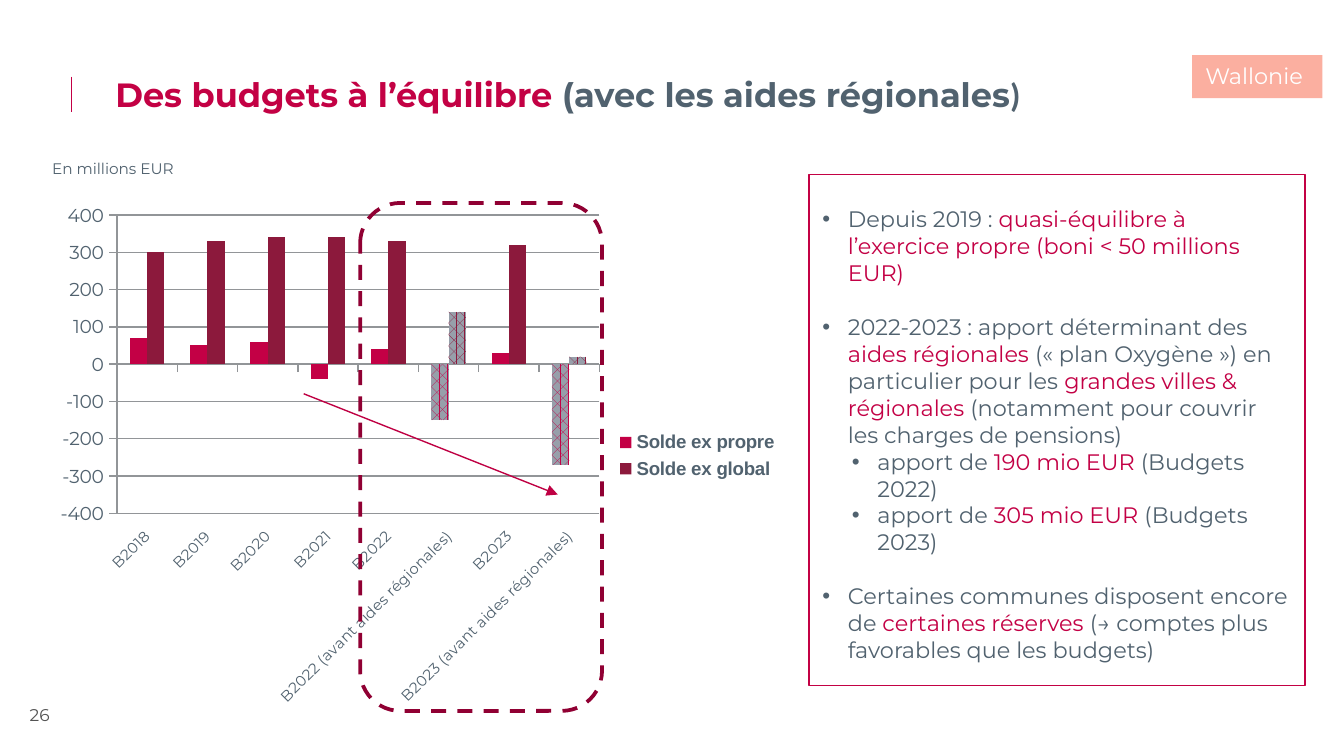
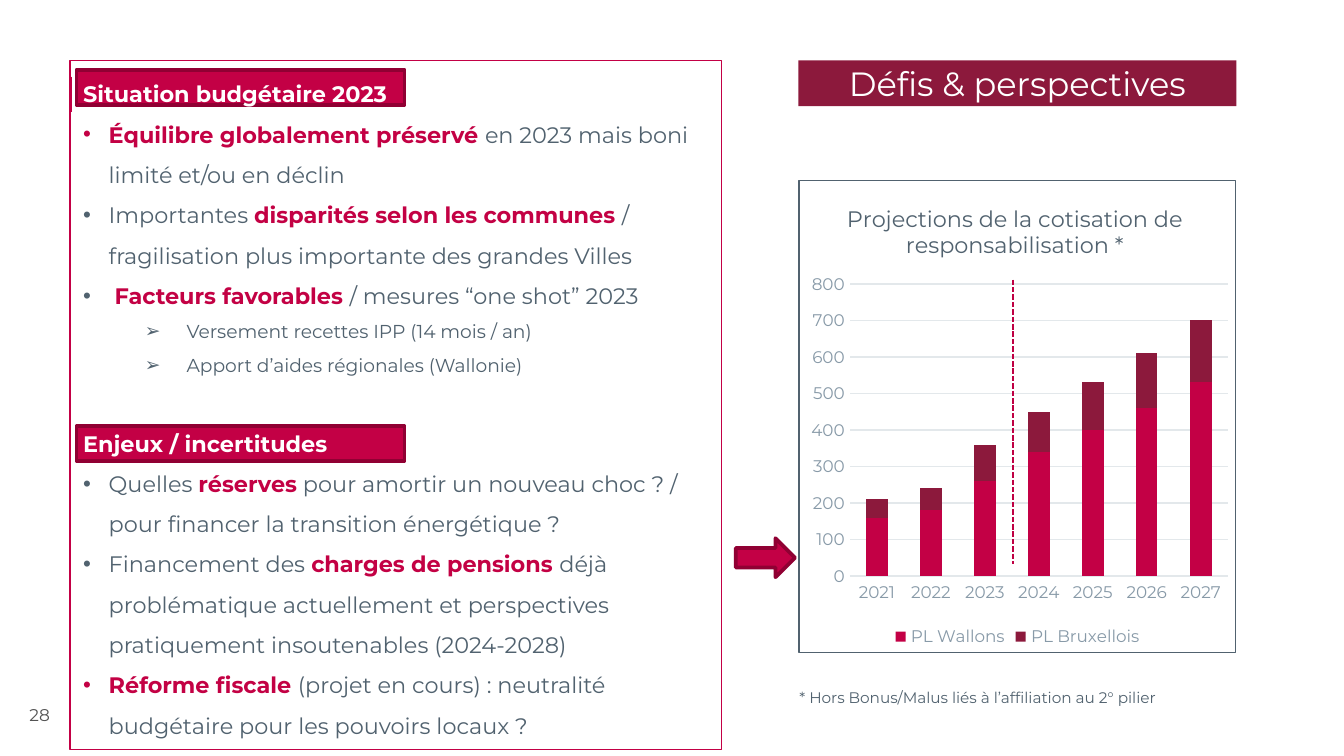
from lxml import etree
from pptx import Presentation
from pptx.chart.data import CategoryChartData
from pptx.dml.color import RGBColor
from pptx.enum.chart import XL_CHART_TYPE, XL_LEGEND_POSITION, XL_TICK_LABEL_POSITION, XL_TICK_MARK
from pptx.enum.dml import MSO_LINE, MSO_PATTERN
from pptx.enum.shapes import MSO_CONNECTOR, MSO_SHAPE
from pptx.enum.text import MSO_ANCHOR, PP_ALIGN
from pptx.oxml import parse_xml
from pptx.oxml.ns import nsdecls, qn
from pptx.util import Emu, Pt

PX = 9144
RED = RGBColor(0xC3, 0x00, 0x45)
ROSE = RGBColor(0xC3, 0x01, 0x44)
WINE = RGBColor(0x8C, 0x19, 0x3C)
DEEP = RGBColor(0x90, 0x00, 0x33)
ARROW = RGBColor(0xBF, 0x00, 0x43)
SLATE = RGBColor(0x51, 0x62, 0x6F)
STEEL = RGBColor(0x88, 0x9A, 0xA8)
MIST = RGBColor(0xE3, 0xE8, 0xEB)
ASH = RGBColor(0x97, 0x9F, 0xAA)
RULE = RGBColor(0x92, 0x95, 0x98)
PEACH = RGBColor(0xFB, 0xAF, 0xA0)
INK = RGBColor(0x53, 0x53, 0x53)
WHITE = RGBColor(0xFF, 0xFF, 0xFF)
FACE = "Montserrat"

RECT, ROUND, DOWN = MSO_SHAPE.RECTANGLE, MSO_SHAPE.ROUNDED_RECTANGLE, MSO_SHAPE.DOWN_ARROW
LEFT, MID = PP_ALIGN.LEFT, PP_ALIGN.CENTER
TOP, MIDDLE = MSO_ANCHOR.TOP, MSO_ANCHOR.MIDDLE
DASH, DOTS = MSO_LINE.DASH, MSO_LINE.SQUARE_DOT
OUT, NONE = XL_TICK_MARK.OUTSIDE, XL_TICK_MARK.NONE
LOW = XL_TICK_LABEL_POSITION.LOW

KINDS = {
    "text": dict(left=0, hang=0, mark=None),
    "head": dict(left=0, hang=0, mark=None, bold=True, color=WHITE),
    "item": dict(left=19, hang=19, mark="•"),
    "sub": dict(left=41, hang=19, mark="•"),
    "step": dict(left=77, hang=31, mark="➢", size=10),
}

NOTES = [
    ("item", "Depuis 2019 : |quasi-équilibre à l’exercice propre (boni < 50 millions EUR)", 0),
    ("item", "2022-2023 : apport déterminant des |aides régionales |(«\u00a0plan Oxygène\u00a0») en particulier "
     "pour les |grandes villes & régionales |(notamment pour couvrir les charges de pensions)", 14.6),
    ("sub", "apport de |190 mio EUR |(Budgets 2022)", 0),
    ("sub", "apport de| 305 mio EUR |(Budgets 2023)", 0),
    ("item", "Certaines communes disposent encore de |certaines réserves |"
     "(→ comptes plus favorables que les budgets)", 14.6),
]
POINTS = [
    ("head", "Situation budgétaire 2023", 0),
    ("item", "|Équilibre globalement préservé |en 2023 mais boni limité et/ou en déclin", 0),
    ("item", "Importantes |disparités selon les communes |/ fragilisation plus importante des grandes Villes", 0),
    ("item", " |Facteurs favorables |/ mesures “one shot” 2023", 0),
    ("step", "Versement recettes IPP (14 mois / an)", 0),
    ("step", "Apport d’aides régionales (Wallonie)", 0),
    ("head", "Enjeux / incertitudes", 21.4),
    ("item", "Quelles |réserves| pour amortir un nouveau choc ? / pour financer la transition énergétique ?", 0),
    ("item", "Financement des |charges de pensions |déjà problématique actuellement et perspectives "
     "pratiquement insoutenables (2024-2028)", 0),
    ("item", "|Réforme fiscale |(projet en cours) : neutralité budgétaire pour les pouvoirs locaux ?", 0),
]
BUDGET = dict(
    kind=XL_CHART_TYPE.COLUMN_CLUSTERED, box=(34, 144, 555, 390), plot=(87, 160, 359, 222),
    cats=["B2018", "B2019", "B2020", "B2021", "B2022", "B2022 (avant aides régionales)",
          "B2023", "B2023 (avant aides régionales)"],
    rows=[("Solde ex propre", [70, 50, 60, -40, 40, -150, 30, -270], RED),
          ("Solde ex global", [300, 330, 340, 340, 330, 140, 320, 20], WINE)],
    span=(-400, 400), tick=OUT, grid=RULE, axis=RULE,
    cat=dict(size=8, color=SLATE, name=FACE), val=dict(size=10, color=SLATE, name=FACE),
    key=dict(size=10, color=SLATE, name="Arial", bold=True), side=XL_LEGEND_POSITION.RIGHT,
    hatch=(5, 7), turn=-45)
PENSION = dict(
    kind=XL_CHART_TYPE.COLUMN_STACKED, box=(594, 134, 326, 352), plot=(632, 211, 282, 218),
    cats=["2021", "2022", "2023", "2024", "2025", "2026", "2027"],
    rows=[("PL Wallons", [160, 180, 260, 340, 400, 460, 530], RED),
          ("PL Bruxellois", [50, 60, 100, 110, 130, 150, 170], WINE)],
    span=(0, 800), tick=NONE, grid=MIST, axis=None,
    cat=dict(size=9, color=STEEL, name=FACE), val=dict(size=9, color=STEEL, name=FACE),
    key=dict(size=9, color=STEEL, name=FACE), side=XL_LEGEND_POSITION.BOTTOM,
    title="Projections de la cotisation de responsabilisation *", edge=SLATE)


def px(*nums):
    return [Emu(n * PX) for n in nums]


def style(font, **fmt):
    for key, val in fmt.items():
        if key == "color":
            font.color.rgb = val
        else:
            setattr(font, key, Pt(val) if key == "size" else val)


def stroke(line, color, width=0.75, dash=None):
    if color is None:
        line.fill.background()
        return
    line.color.rgb = color
    line.width = Pt(width)
    if dash:
        line.dash_style = dash


def form(slide, kind, box, fill=None, line=None, width=0.75, dash=None):
    shape = slide.shapes.add_shape(kind, *px(*box))
    shape.shadow.inherit = False
    if fill is None:
        shape.fill.background()
    else:
        shape.fill.solid()
        shape.fill.fore_color.rgb = fill
    stroke(shape.line, line, width, dash)
    return shape


def label(slide, box):
    return slide.shapes.add_textbox(*px(*box))


def write(shape, paras, size=12, color=SLATE, accent=RED, bold=False,
          align=LEFT, anchor=TOP, space=1, pad=(10, 5, 10, 5)):
    frame = shape.text_frame
    frame.word_wrap = True
    frame.vertical_anchor = anchor
    for side, gap in zip(("left", "top", "right", "bottom"), px(*pad)):
        setattr(frame, "margin_" + side, gap)
    for n, (kind, text, before) in enumerate(paras):
        para = frame.add_paragraph() if n else frame.paragraphs[0]
        fmt = dict(size=size, color=color, name=FACE, bold=False) | KINDS[kind]
        left, hang, mark = (fmt.pop(key) for key in ("left", "hang", "mark"))
        if mark:
            props = para._p.get_or_add_pPr()
            props.set("marL", str(left * PX))
            props.set("indent", str(-hang * PX))
            etree.SubElement(props, qn("a:buFont")).set("typeface", "Arial")
            etree.SubElement(props, qn("a:buChar")).set("char", mark)
        para.alignment = align
        para.line_spacing = space
        para.space_before = Pt(before)
        for k, part in enumerate(text.split("|")):
            if part:
                run = para.add_run()
                run.text = part
                style(run.font, **(fmt | dict(color=accent, bold=bold) if k % 2 else fmt))


def link(slide, start, end, color, width=0.75, dash=None, head=False):
    line = slide.shapes.add_connector(MSO_CONNECTOR.STRAIGHT, *px(*start, *end))
    stroke(line.line, color, width, dash)
    props = line._element.spPr
    if head:
        etree.SubElement(props.find(qn("a:ln")), qn("a:tailEnd")).set("type", "triangle")
    etree.SubElement(props, qn("a:effectLst"))


def place(node, index, **spots):
    lay = node.find(qn("c:layout"))
    if lay is None:
        lay = etree.Element(qn("c:layout"))
        node.insert(index, lay)
    hand = etree.SubElement(lay, qn("c:manualLayout"))
    for key, val in spots.items():
        etree.SubElement(hand, qn("c:" + key)).set("val", str(val))


def graph(slide, info):
    data = CategoryChartData()
    data.categories = info["cats"]
    for name, vals, _ in info["rows"]:
        data.add_series(name, vals)
    box = info["box"]
    chart = slide.shapes.add_chart(info["kind"], *px(*box), data).chart
    style(chart.font, size=10, color=SLATE, name=FACE)
    chart.has_title = "title" in info
    if chart.has_title:
        frame = chart.chart_title.text_frame
        frame.text = info["title"]
        style(frame.paragraphs[0].runs[0].font, size=12, color=SLATE, name=FACE, bold=False)
        place(chart.chart_title._element, 1, xMode="edge", yMode="edge", x=0.1, y=0.04)
    chart.has_legend = True
    chart.legend.position = info["side"]
    chart.legend.include_in_layout = False
    style(chart.legend.font, **info["key"])

    cat, val = chart.category_axis, chart.value_axis
    val.minimum_scale, val.maximum_scale = info["span"]
    val.major_unit = 100
    val.tick_labels.number_format = "#,##0"
    val.tick_labels.number_format_is_linked = False
    val.has_major_gridlines = True
    stroke(val.major_gridlines.format.line, info["grid"])
    for axis, fmt, color in ((cat, info["cat"], info["grid"]), (val, info["val"], info["axis"])):
        axis.major_tick_mark = info["tick"]
        axis.minor_tick_mark = NONE
        style(axis.tick_labels.font, **fmt)
        stroke(axis.format.line, color)
    if "turn" in info:
        cat.tick_label_position = LOW
        body = cat._element.find(qn("c:txPr")).find(qn("a:bodyPr"))
        body.set("rot", str(info["turn"] * 60000))
        body.set("vert", "horz")

    plot = chart.plots[0]
    plot.gap_width = 150
    plot.vary_by_categories = False
    for row, (_, _, color) in zip(plot.series, info["rows"]):
        row.invert_if_negative = False
        row.format.fill.solid()
        row.format.fill.fore_color.rgb = color
        for n in info.get("hatch", ()):
            fill = row.points[n].format.fill
            fill.patterned()
            fill.pattern = MSO_PATTERN.PERCENT_60
            fill.fore_color.rgb = color
            fill.back_color.rgb = ASH

    x, y, w, h = info["plot"]
    root = chart.element.find(qn("c:chart"))
    place(root.find(qn("c:plotArea")), 0, layoutTarget="inner", xMode="edge", yMode="edge",
          x=(x - box[0]) / box[2], y=(y - box[1]) / box[3], w=w / box[2], h=h / box[3])
    if "edge" in info:
        root.addnext(parse_xml(
            f'<c:spPr {nsdecls("c", "a")}><a:noFill/><a:ln w="9525"><a:solidFill>'
            f'<a:srgbClr val="{info["edge"]}"/></a:solidFill></a:ln></c:spPr>'))


def start(deck, number):
    slide = deck.slides.add_slide(deck.slide_layouts[6])
    write(label(slide, (12, 520, 35, 23)), [("text", number, 0)], 9.1, INK, align=MID, pad=(4, 4, 4, 4))
    link(slide, (53, 57), (53, 83), RED)
    return slide


def budgets(deck):
    slide = start(deck, "26")
    title = label(slide, (76, 53, 870, 34))
    write(title, [("text", "|Des budgets à l’équilibre ", 0)], 18, accent=ROSE, bold=True, anchor=MIDDLE)
    for text, face in (("(avec les aides régionales", FACE), (")", "Calibri")):
        run = title.text_frame.paragraphs[0].add_run()
        run.text = text
        style(run.font, size=18, color=SLATE, name=face, bold=True)
    write(form(slide, RECT, (602, 130, 369, 380), line=ROSE), NOTES, pad=(10, 23, 10, 5))
    write(label(slide, (29, 107, 126, 28)), [("text", "En millions EUR", 0)], 8.2, space=1.5)
    write(form(slide, RECT, (887, 41, 97, 32), PEACH), [("text", "Wallonie", 0)], color=WHITE)
    graph(slide, BUDGET)
    form(slide, ROUND, (268, 151, 180, 378), line=DEEP, width=2, dash=DASH)
    link(slide, (226, 293), (415, 368), ARROW, head=True)


def outlook(deck):
    slide = start(deck, "28")
    for top in (317, 52):
        form(slide, RECT, (57, top, 244, 26), RED, DEEP, 2)
    graph(slide, PENSION)
    write(form(slide, RECT, (594, 45, 326, 34), WINE), [("text", "Défis & perspectives", 0)],
          18, WHITE, align=MID, anchor=MIDDLE)
    link(slide, (754, 208), (754, 420), ARROW, 1, DOTS)
    write(form(slide, RECT, (52, 45, 485, 513), line=RED), POINTS, accent=ROSE, bold=True, space=1.5)
    form(slide, DOWN, (555, 393, 29, 44), RED, DEEP, 2).rotation = 270
    write(label(slide, (585, 500, 335, 25)),
          [("text", "* Hors Bonus/Malus liés à l’affiliation au 2° pilier", 0)], 8.2, space=1.5)


def main():
    deck = Presentation()
    deck.slide_width = Emu(1000 * PX)
    deck.slide_height = Emu(deck.slide_width * 9 // 16)
    budgets(deck)
    outlook(deck)
    deck.save("out.pptx")


if __name__ == "__main__":
    main()
